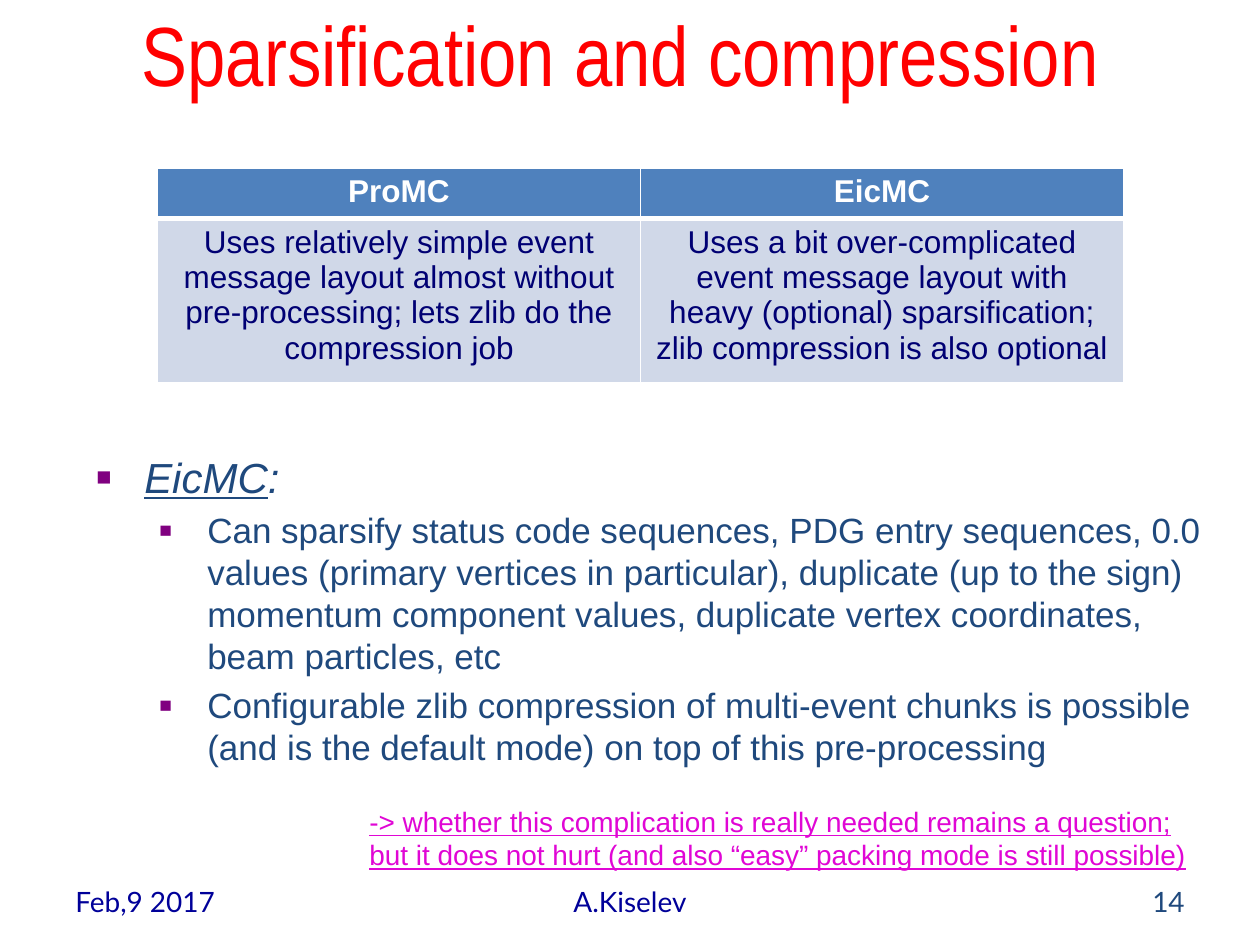
from lxml.etree import SubElement
from pptx import Presentation
from pptx.dml.color import RGBColor
from pptx.enum.text import MSO_ANCHOR, PP_ALIGN
from pptx.oxml.ns import qn
from pptx.util import Inches, Pt

LEFT, MID, RIGHT = PP_ALIGN.LEFT, PP_ALIGN.CENTER, PP_ALIGN.RIGHT


def cell(n):
    """Length of n grid cells; the slide is 60 by 45 cells."""
    return Inches(n / 6)


def color(code):
    return RGBColor.from_string(code)


def write(para, text, size=18, font="Arial", ink="1F497D", align=LEFT,
          bold=False, italic=False, under=False):
    para.alignment = align
    run = para.add_run()
    run.text = text
    face = run.font
    face.size, face.name = Pt(size), font
    face.bold, face.italic, face.underline = bold, italic, under
    face.color.rgb = color(ink)


def bullet(para, indent, ink="800080"):
    props = para._p.get_or_add_pPr()
    props.set("marL", str(Inches(indent)))
    props.set("indent", str(-Inches(0.38)))
    tint = SubElement(props, qn("a:buClr"))
    SubElement(tint, qn("a:srgbClr"), val=ink)
    SubElement(props, qn("a:buSzPct"), val="60000")
    SubElement(props, qn("a:buFont"), typeface="Arial")
    SubElement(props, qn("a:buChar"), char="■")


def edge(box, side, width):
    """Draw a white border on one side of a table cell."""
    line = SubElement(box._tc.get_or_add_tcPr(), qn("a:" + side), w=str(Pt(width)))
    fill = SubElement(line, qn("a:solidFill"))
    SubElement(fill, qn("a:srgbClr"), val="FFFFFF")


class Deck:
    head, pale, navy = "4F81BD", "D0D8E8", "000073"

    def __init__(self):
        self.show = Presentation()
        self.show.slide_width, self.show.slide_height = cell(60), cell(45)
        self.slide = self.show.slides.add_slide(self.show.slide_layouts[6])

    def frame(self, x, y, w, h, wrap=True, anchor=MSO_ANCHOR.TOP):
        box = self.slide.shapes.add_textbox(cell(x), cell(y), cell(w), cell(h))
        frame = box.text_frame
        frame.word_wrap, frame.vertical_anchor = wrap, anchor
        return frame

    def label(self, text, x, y, w, h, **style):
        frame = self.frame(x, y, w, h, anchor=MSO_ANCHOR.MIDDLE)
        write(frame.paragraphs[0], text, **style)

    def note(self, lines, x, y, w, h, **style):
        frame = self.frame(x, y, w, h, wrap=False)
        for i, text in enumerate(lines):
            para = frame.add_paragraph() if i else frame.paragraphs[0]
            write(para, text, **style)

    def points(self, topic, items, x, y, w, h):
        frame = self.frame(x, y, w, h)
        top = frame.paragraphs[0]
        bullet(top, 0.38)
        write(top, topic, size=24, italic=True, under=True)
        write(top, ":", size=24, italic=True)
        for text in items:
            para = frame.add_paragraph()
            para.space_before = Pt(4)
            bullet(para, 0.88)
            write(para, text, size=20)

    def table(self, rows, heights, x, y, w):
        shape = self.slide.shapes.add_table(
            len(rows), len(rows[0]), cell(x), cell(y), cell(w), cell(sum(heights)))
        grid = shape.table
        for r, row in enumerate(rows):
            grid.rows[r].height = cell(heights[r])
            for c, text in enumerate(row):
                box = grid.cell(r, c)
                for side in ("lnL", "lnR", "lnT", "lnB"):
                    joint = (r, side) in ((0, "lnB"), (1, "lnT"))
                    edge(box, side, 3 if joint else 1)
                box.fill.solid()
                box.fill.fore_color.rgb = color(self.pale if r else self.head)
                write(box.text_frame.paragraphs[0], text, align=MID,
                      bold=r == 0, ink=self.navy if r else "FFFFFF")


def main():
    deck = Deck()
    foot = dict(y=41.7, h=2.4, size=16, font="Lato")
    deck.label("Feb,9 2017", x=3, w=14, ink="000099", **foot)
    deck.label("A.Kiselev", x=20.5, w=19, ink="000099", align=MID, **foot)
    deck.label("14", x=43, w=14, align=RIGHT, **foot)
    deck.label("Sparsification and compression ", -1, 0, 62, 5,
               size=48, font="Arial Narrow", ink="FF0000", align=MID)
    deck.table([
        ("ProMC", "EicMC"),
        ("Uses relatively simple event message layout almost without "
         "pre-processing; lets zlib do the compression job",
         "Uses a bit over-complicated event message layout with heavy "
         "(optional) sparsification; zlib compression is also optional"),
    ], (2.4, 7.2), 7.5, 8, 46)
    deck.points("EicMC", [
        "Can sparsify status code sequences, PDG entry sequences, 0.0 values "
        "(primary vertices in particular), duplicate (up to the sign) momentum "
        "component values, duplicate vertex coordinates, beam particles, etc",
        "Configurable zlib compression of multi-event chunks is possible "
        "(and is the default mode) on top of this pre-processing",
    ], 4, 21.2, 55, 16.5)
    deck.note([
        "-> whether this complication is really needed remains a question;",
        "but it does not hurt (and also “easy” packing mode is still possible)",
    ], 17, 38, 40.4, 3.84, size=16, ink="E006D5", under=True)
    deck.show.save("out.pptx")


if __name__ == "__main__":
    main()
